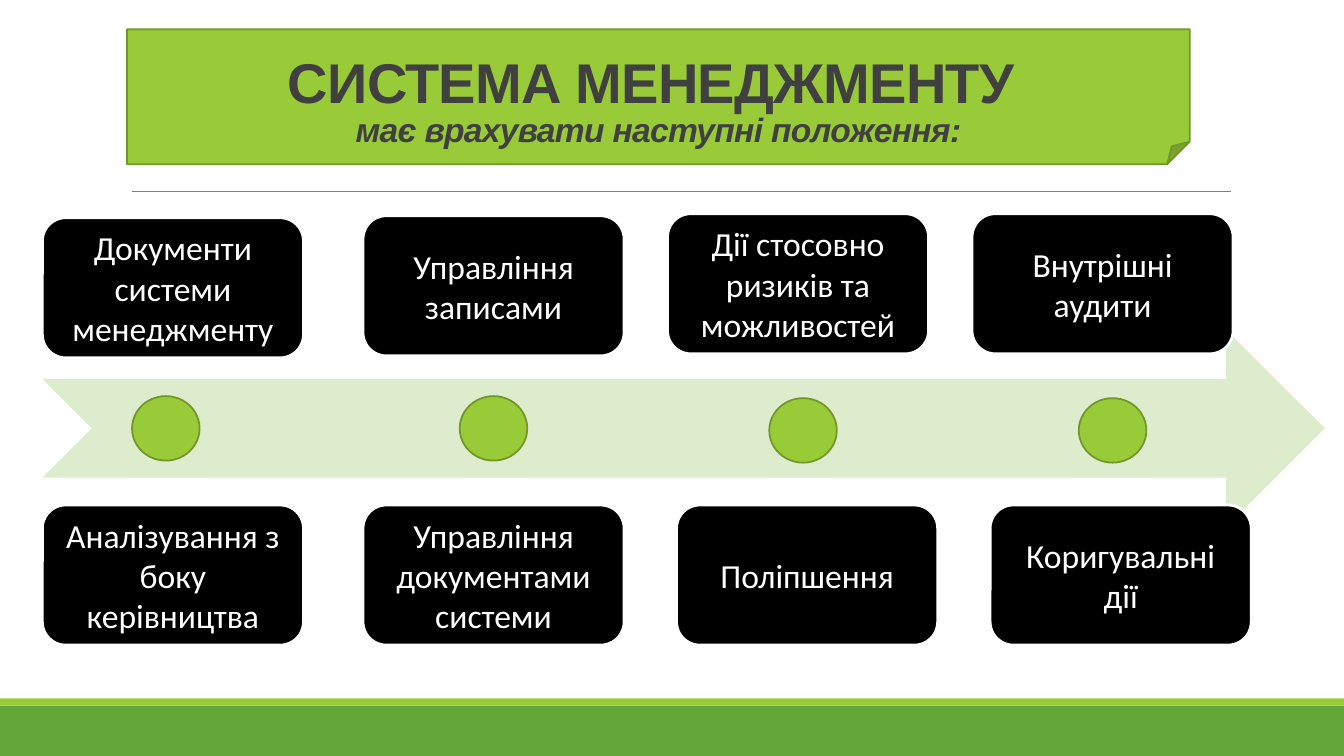
from dataclasses import dataclass
from pptx import Presentation
from pptx import util as u
from pptx.dml.color import RGBColor
from pptx.enum import shapes, text
from pptx.oxml import parse_xml

Kind = shapes.MSO_SHAPE
Anchor = text.MSO_ANCHOR


@dataclass(frozen=True)
class Theme:
    green: str = "63A537"
    lime: str = "99CB38"
    edge: str = "719629"
    pale: str = "DEECCE"
    rule: str = "808080"
    dark: str = "404040"
    black: str = "000000"
    white: str = "FFFFFF"
    head: int = 40
    body: int = 24


theme = Theme()
deck = Presentation()
deck.slide_width, deck.slide_height = u.Inches(13.33), u.Inches(7.5)
slide = deck.slides.add_slide(deck.slide_layouts[6])


def draw(kind, box, fill, line=None, width=1.25):
    shape = slide.shapes.add_shape(kind, *map(u.Inches, box))
    shape.shadow.inherit = False
    shape.fill.solid()
    shape.fill.fore_color.rgb = RGBColor.from_string(fill)
    if line:
        shape.line.color.rgb = RGBColor.from_string(line)
        shape.line.width = u.Pt(width)
    else:
        shape.line.fill.background()
    return shape


def write(shape, lines, font="Calibri", sizes=(theme.body,), color=theme.white,
          bold=False, slant=(), gap=1.0, track=0, anchor=Anchor.MIDDLE):
    """Fill a shape with centred lines; sizes repeat from the last one."""
    frame = shape.text_frame
    frame.word_wrap = True
    frame.vertical_anchor = anchor
    for i, words in enumerate(lines):
        para = frame.add_paragraph() if i else frame.paragraphs[0]
        para.alignment = text.PP_ALIGN.CENTER
        para.line_spacing = gap
        run = para.add_run()
        run.text = words
        run.font.name = font
        run.font.size = u.Pt(sizes[min(i, len(sizes) - 1)])
        run.font.bold = bold
        run.font.italic = i in slant
        run.font.color.rgb = RGBColor.from_string(color)
        if track:
            run._r.get_or_add_rPr().set("spc", str(round(track * 100)))


# Footer bands and the rule under the title
draw(Kind.RECTANGLE, (0, 7, 13.33, 0.5), theme.green)
draw(Kind.RECTANGLE, (0, 6.93, 13.33, 0.07), theme.lime)
rule = slide.shapes.add_connector(
    shapes.MSO_CONNECTOR.STRAIGHT, *map(u.Inches, (1.31, 1.9, 12.21, 1.9)))
rule.line.color.rgb = RGBColor.from_string(theme.rule)
rule.line.width = u.Pt(0.5)
rule._element.spPr.append(parse_xml(
    '<a:effectLst xmlns:a="http://schemas.openxmlformats.org/drawingml/2006/main"/>'))

# Title on a folded note
draw(Kind.FOLDED_CORNER, (1.26, 0.29, 10.54, 1.34), theme.lime, theme.edge)
title = slide.shapes.add_textbox(*map(u.Inches, (0.52, 0.35, 12.02, 1.18)))
write(title, ["СИСТЕМА МЕНЕДЖМЕНТУ ", "має врахувати наступні положення:"],
      font="Arial", sizes=(theme.head, theme.body), color=theme.dark,
      bold=True, slant=(1,), gap=0.85, track=-0.5, anchor=Anchor.BOTTOM)

# Arrow with cards above and below
draw(Kind.NOTCHED_RIGHT_ARROW, (0.42, 3.27, 12.72, 1.96), theme.pale)
cards = [
    (0.42, 2.16, ["Документи", "системи", "менеджменту"]),
    (3.6, 2.14, ["Управління записами"]),
    (6.62, 2.12, ["Дії стосовно ризиків та можливостей"]),
    (9.64, 2.12, ["Внутрішні аудити"]),
    (0.42, 5.01, ["Аналізування з боку керівництва"]),
    (3.6, 5.01, ["Управління документами", "системи"]),
    (6.71, 5.01, ["Поліпшення"]),
    (9.82, 5.01, ["Коригувальні дії"]),
]
for left, top, lines in cards:
    card = draw(Kind.ROUNDED_RECTANGLE, (left, top, 2.59, 1.39),
                theme.black, theme.white, 2)
    write(card, lines)

# Milestones on the arrow
for left, top in [(1.31, 3.93), (4.56, 3.93), (7.63, 3.95), (10.7, 3.95)]:
    draw(Kind.FLOWCHART_CONNECTOR, (left, top, 0.67, 0.64),
         theme.lime, theme.edge)

deck.save("out.pptx")
